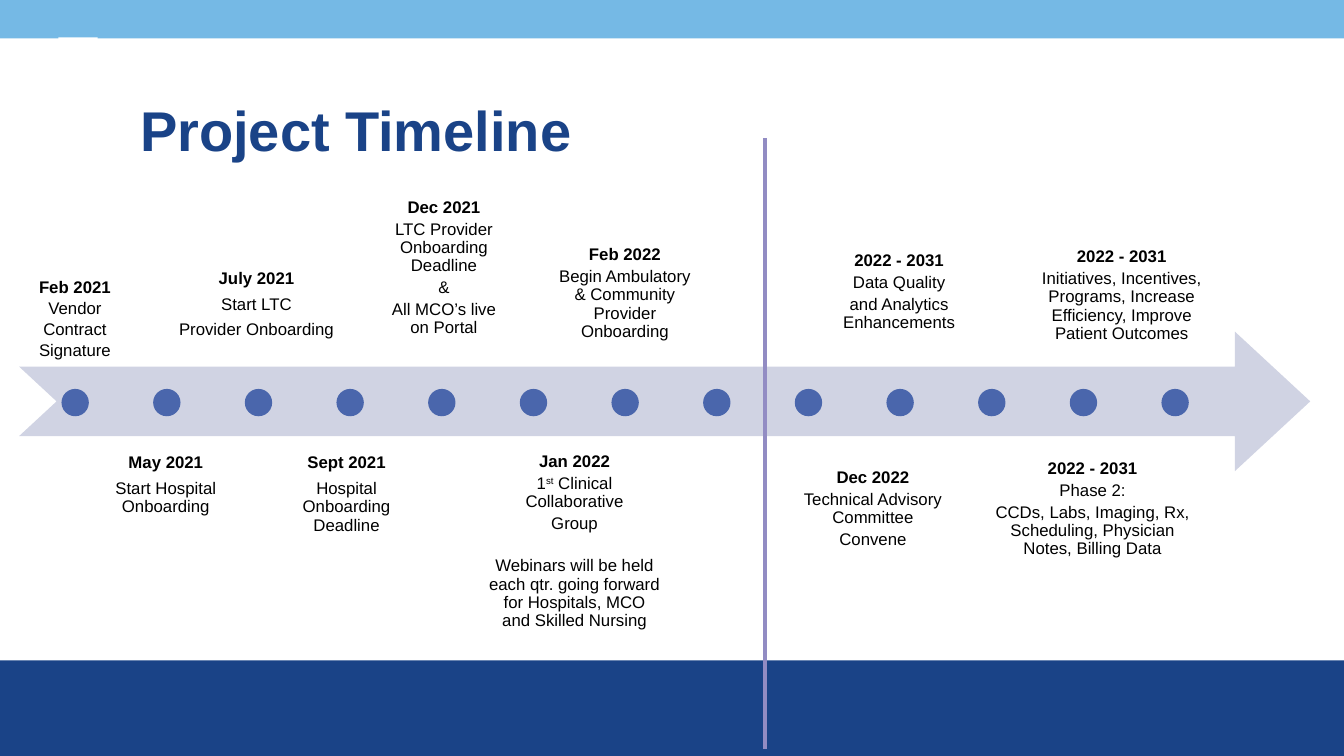
from pptx import Presentation
from pptx.dml.color import RGBColor
from pptx.enum.shapes import MSO_CONNECTOR, MSO_SHAPE
from pptx.enum.text import MSO_ANCHOR, PP_ALIGN
from pptx.oxml.ns import qn
from pptx.util import Cm, Pt
from lxml import etree

RECT, OVAL = MSO_SHAPE.RECTANGLE, MSO_SHAPE.OVAL
ARROW = MSO_SHAPE.NOTCHED_RIGHT_ARROW
STRAIGHT = MSO_CONNECTOR.STRAIGHT
TOP, LEFT, CENTER = MSO_ANCHOR.TOP, PP_ALIGN.LEFT, PP_ALIGN.CENTER

TITLE = "Project Timeline"
FONT = "Arial"
NAVY, SKY, WHITE, BLACK = "1A4387", "75B9E5", "FFFFFF", "000000"
ARROW_FILL, DOT_FILL, DIVIDER = "D0D3E3", "4A66AC", "928CC3"

# All lengths in cm: left, top, width, height
SLIDE_W, SLIDE_H = 33.87, 19.05
BANDS = [
    (0, 16.64, SLIDE_W, SLIDE_H - 16.64, NAVY),
    (0, 0, SLIDE_W, 0.97, SKY),
    (1.47, 0.94, 0.99, 1.04, WHITE),
]
DOT_COUNT, DOT_SIZE, DOT_PITCH = 13, 0.69, 2.31
DOT_LEFT, DOT_TOP = 1.55, 9.8

# Line spacing and space before each later paragraph (points)
NORMAL = (0.91, 2.5)
WIDE = (0.91, 5.7)
FIXED = (Pt(15.1), 0)
FIXED_WIDE = (Pt(15.1), 2.9)

# Box, spacing, date, lines; ^ marks superscript, a tuple adds its own space before
MILESTONES = [
    ((0.43, 6.86, 2.92, 1.6), FIXED, "Feb 2021", ["Vendor Contract Signature"]),
    ((2.34, 11.35, 3.68, 1.8), WIDE, "May 2021", ["Start Hospital Onboarding"]),
    ((4.42, 6.65, 4.09, 1.9), FIXED_WIDE, "July 2021",
     ["Start LTC", "Provider Onboarding"]),
    ((7.06, 11.35, 3.35, 2.3), WIDE, "Sept 2021", ["Hospital Onboarding Deadline"]),
    ((9.73, 4.93, 2.92, 3.7), NORMAL, "Dec 2021",
     ["LTC Provider Onboarding Deadline", "&", "All MCO’s live on Portal"]),
    ((12.32, 11.33, 4.32, 4.5), NORMAL, "Jan 2022",
     ["1^st^ Clinical Collaborative", "Group",
      ("Webinars will be held each qtr. going forward for Hospitals, MCO "
       "and Skilled Nursing", 17.2)]),
    ((13.97, 6.12, 3.56, 2.5), NORMAL, "Feb 2022",
     ["Begin Ambulatory & Community Provider Onboarding"]),
    ((20.22, 11.73, 3.56, 2.7), NORMAL, "Dec 2022",
     ["Technical Advisory Committee", "Convene"]),
    ((24.87, 11.51, 5.33, 3.2), NORMAL, "2022 - 2031",
     ["Phase 2:", "CCDs, Labs, Imaging, Rx, Scheduling, Physician Notes, Billing Data"]),
    ((20.88, 6.27, 3.56, 2.7), NORMAL, "2022 - 2031",
     ["Data Quality", "and Analytics Enhancements"]),
    ((25.88, 6.17, 4.78, 3.1), NORMAL, "2022 - 2031",
     ["Initiatives, Incentives, Programs, Increase Efficiency, Improve Patient Outcomes"]),
]


def rgb(color):
    return RGBColor.from_string(color)


def add_filled(s, kind, left, top, width, height, color):
    sp = s.shapes.add_shape(kind, Cm(left), Cm(top), Cm(width), Cm(height))
    sp.shadow.inherit = False
    sp.fill.solid()
    sp.fill.fore_color.rgb = rgb(color)
    sp.line.fill.background()
    return sp


def style(font, size, color, bold):
    font.name, font.size, font.bold = FONT, Pt(size), bold
    font.color.rgb = rgb(color)


def add_title(s):
    title = s.shapes.title
    title.left, title.top, title.width, title.height = Cm(3.28), Cm(2.36), Cm(28.24), Cm(3.68)
    tf = title.text_frame
    tf.text = TITLE
    tf.vertical_anchor = TOP
    tf.margin_top = Cm(0.23)
    p = tf.paragraphs[0]
    p.alignment, p.line_spacing = LEFT, 0.9
    style(p.runs[0].font, 40, NAVY, True)


def add_divider(s):
    line = s.shapes.add_connector(STRAIGHT, Cm(19.28), Cm(3.48), Cm(19.28), Cm(18.87))
    line.line.color.rgb = rgb(DIVIDER)
    line.line.width = Pt(2.25)
    etree.SubElement(line._element.spPr, qn("a:effectLst"))


def add_milestone(s, box, spacing, date, lines):
    tf = s.shapes.add_textbox(*[Cm(v) for v in box]).text_frame
    tf.word_wrap = True
    tf.margin_left = tf.margin_right = tf.margin_bottom = 0
    tf.margin_top = Cm(0.08)
    line_spacing, before = spacing
    for i, line in enumerate([date] + lines):
        text, gap = line if isinstance(line, tuple) else (line, before)
        p = tf.add_paragraph() if i else tf.paragraphs[0]
        p.alignment, p.line_spacing = CENTER, line_spacing
        p.space_before = Pt(gap if i else 0)
        for j, piece in enumerate(text.split("^")):
            r = p.add_run()
            r.text = piece
            style(r.font, 12, BLACK, i == 0)
            if j % 2:
                r._r.get_or_add_rPr().set("baseline", "30000")


def main():
    prs = Presentation()
    prs.slide_width, prs.slide_height = Cm(SLIDE_W), Cm(SLIDE_H)
    s = prs.slides.add_slide(prs.slide_layouts[5])
    for band in BANDS:
        add_filled(s, RECT, *band)
    add_title(s)
    arrow = add_filled(s, ARROW, 0.48, 8.36, 32.54, 3.51, ARROW_FILL)
    arrow.adjustments[0], arrow.adjustments[1] = 0.5, 0.54
    add_divider(s)
    for i in range(DOT_COUNT):
        add_filled(s, OVAL, DOT_LEFT + i * DOT_PITCH, DOT_TOP, DOT_SIZE, DOT_SIZE, DOT_FILL)
    for milestone in MILESTONES:
        add_milestone(s, *milestone)
    prs.save("out.pptx")


if __name__ == "__main__":
    main()
